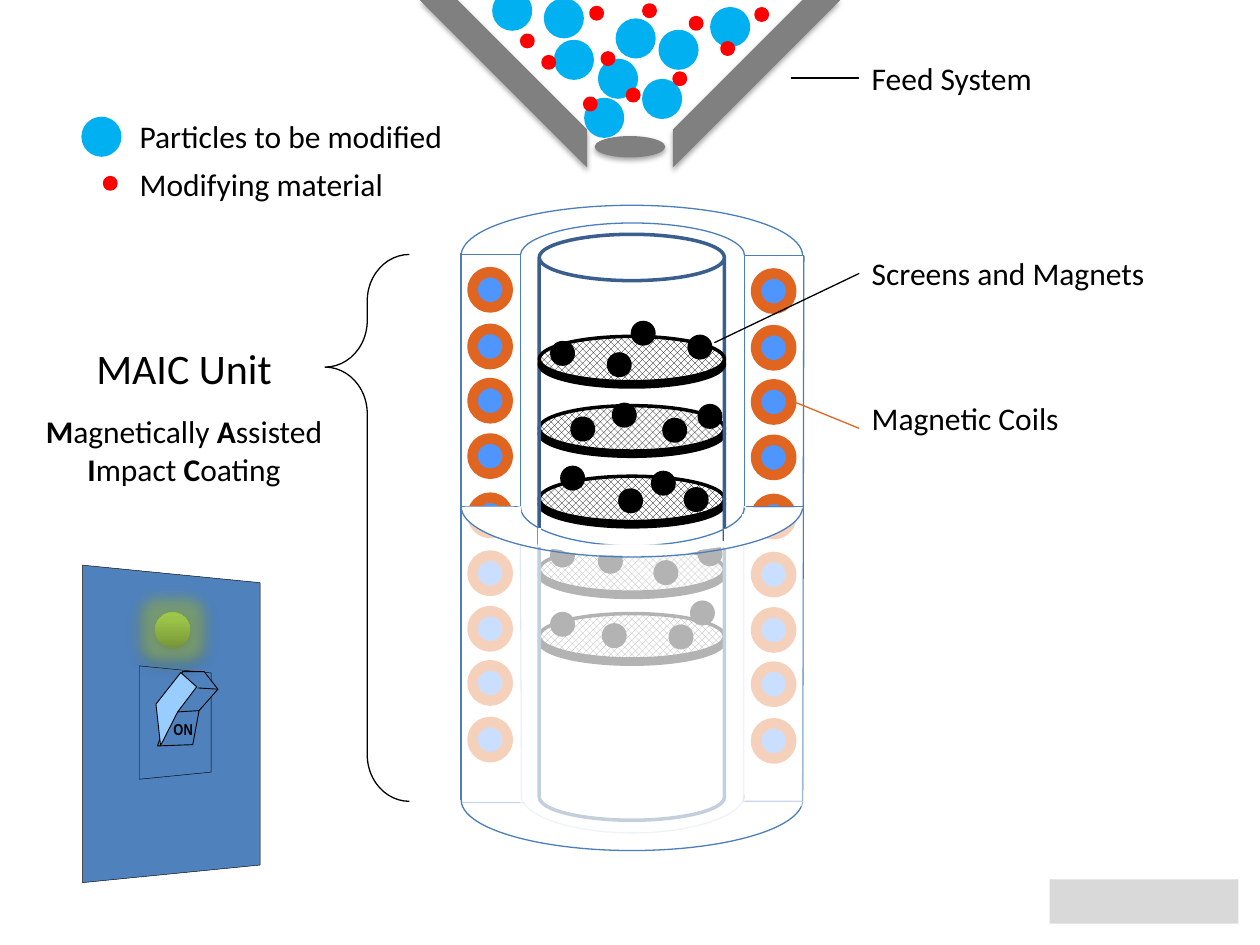
from dataclasses import dataclass

from lxml import etree
from pptx import Presentation
from pptx import util as u
from pptx.dml.color import RGBColor
from pptx.enum import dml, shapes, text
from pptx.oxml import ns

KIND = shapes.MSO_SHAPE
COLUMNS, ROWS = 10, 7.5
CELL = u.Inches(1)


@dataclass(frozen=True)
class Theme:
    font: str = "Calibri"
    switch_font: str = "Arial Narrow"
    title: int = 24
    body: int = 18
    small: int = 9
    black: str = "000000"
    white: str = "FFFFFF"
    steel: str = "4B7EBC"
    tube: str = "3A5F8C"
    panel: str = "4F81BD"
    lever: str = "99CCFF"
    copper: str = "E06520"
    core: str = "0066FF"
    particle: str = "00B0F0"
    modifier: str = "FF0000"
    hopper: str = "808080"
    badge: str = "D9D9D9"
    glow: str = "9BBB59"
    lamp: tuple = ((0, "779737"), (80, "9BC348"), (100, "9DC746"))
    hair: float = 0.75
    thin: float = 0.5
    bold: float = 2
    coil: float = 6


THEME = Theme()
SOFT_SHADOW = (35, 3.1, 1.8)
HARD_SHADOW = (100, 0, 3)
ARC_START = 108.373
COIL_ROWS = (2.16, 2.61, 3.04, 3.48, 3.95, 4.41, 4.85, 5.28, 5.73)
BACK_SCREENS = (
    (4.87, ((4.79, 4.96), (5.32, 4.97), (5.49, 4.78), (4.38, 4.87))),
    (4.34, ((4.38, 4.32), (5.2, 4.46), (5.55, 4.31), (4.76, 4.37))),
    (3.78, ((4.46, 3.71), (5.18, 3.75), (5.44, 3.88), (4.92, 3.89))),
    (3.22, ((5.55, 3.22), (4.87, 3.21), (4.54, 3.32), (5.27, 3.33))),
)
TOP_MAGNETS = ((5.47, 2.67), (4.83, 2.81), (5.02, 2.56), (4.38, 2.72))
PARTICLES = ((4.41, 0.33), (4.76, 0.48), (5.24, 0.25), (5.11, 0.64), (5.65, 0.07),
             (3.92, -0.06), (4.9, 0.16), (4.65, 0.79), (4.33, 0))
MODIFIERS = ((4.14, 0.28), (4.78, 0.42), (5.35, 0.58), (4.69, 0.06), (5.11, 0.04), (4.98, 0.71),
             (5.73, 0.34), (4.31, 0.45), (5.48, 0.14), (4.64, 0.78), (6, 0.07))


def cells(*lengths):
    return [round(length * CELL) for length in lengths]


def apply(target, formats):
    for name, value in formats.items():
        setattr(target, name, value)


def node(parent, tag, **attributes):
    values = {key: str(value) for key, value in attributes.items()}
    return etree.SubElement(parent, ns.qn(f"a:{tag}"), values)


def fade(element, alpha):
    for color in element.iter(ns.qn("a:srgbClr")):
        node(color, "alpha", val=alpha * 1000)


def style(shape, fill=None, line=None, weight=THEME.hair, alpha=None, shadow=None, glow=None):
    if fill:
        shape.fill.solid()
        shape.fill.fore_color.rgb = RGBColor.from_string(fill)
    else:
        shape.fill.background()
    if alpha:
        fade(shape.element.spPr, alpha)
    if line:
        shape.line.color.rgb = RGBColor.from_string(line)
        shape.line.width = u.Pt(weight)
    else:
        shape.line.fill.background()
    shape.shadow.inherit = False
    effects = shape.element.spPr.find(ns.qn("a:effectLst"))
    if glow:
        halo = node(effects, "glow", rad=u.Pt(16))
        node(node(halo, "srgbClr", val=glow), "alpha", val=60000)
    if shadow:
        opacity, blur, distance = shadow
        cast = node(effects, "outerShdw", blurRad=u.Pt(blur), dist=u.Pt(distance),
                    dir=5400000, rotWithShape=0)
        node(node(cast, "srgbClr", val=THEME.black), "alpha", val=opacity * 1000)


def figure(page, kind, place, adjust=(), turn=0, flip=False, **look):
    shape = page.shapes.add_shape(kind, *cells(*place))
    for index, value in enumerate(adjust):
        shape.adjustments[index] = value
    shape.rotation = turn
    if flip:
        shape.element.spPr.get_or_add_xfrm().set("flipH", "1")
    style(shape, **look)
    return shape


def disc(page, left, top, size, fill, line, weight=THEME.bold, **look):
    figure(page, KIND.OVAL, (left, top, size, size), fill=fill, line=line, weight=weight, **look)


def arc(page, place, end=0, turn=0):
    return figure(page, KIND.ARC, place, (ARC_START, end), turn, line=THEME.steel)


def polygon(page, points, turn=0, **look):
    corners = [cells(*point) for point in points]
    builder = page.shapes.build_freeform(*corners[0], scale=1.0)
    builder.add_line_segments(corners[1:], close=True)
    shape = builder.convert_to_shape()
    shape.rotation = turn
    style(shape, **look)


def stroke(page, start, end, color=THEME.steel, weight=THEME.hair, alpha=None):
    connector = page.shapes.add_connector(shapes.MSO_CONNECTOR.STRAIGHT, *cells(*start, *end))
    connector.line.color.rgb = RGBColor.from_string(color)
    connector.line.width = u.Pt(weight)
    if alpha:
        fade(connector.element.spPr, alpha)
    node(connector.element.spPr, "effectLst")


def gradient(shape, stops, angle):
    properties = shape.element.spPr
    properties.remove(properties.find(ns.qn("a:noFill")))
    fill = etree.Element(ns.qn("a:gradFill"), {"rotWithShape": "1"})
    listing = node(fill, "gsLst")
    for position, color in stops:
        node(node(listing, "gs", pos=position * 1000), "srgbClr", val=color)
    node(fill, "lin", ang=angle * 60000, scaled=0)
    properties.find(ns.qn("a:prstGeom")).addnext(fill)


def label(page, place, paragraphs, size=THEME.body, name=THEME.font, align=None):
    box = page.shapes.add_textbox(*cells(*place))
    frame = box.text_frame
    apply(frame, {"word_wrap": False, "auto_size": text.MSO_AUTO_SIZE.SHAPE_TO_FIT_TEXT})
    for index, (spans, formats) in enumerate(paragraphs):
        para = frame.add_paragraph() if index else frame.paragraphs[0]
        apply(para, {"alignment": align, **formats})
        for words, marks in spans:
            span = para.add_run()
            span.text = words
            apply(span.font, {"name": name, "size": u.Pt(size), **marks})
            span.font.color.rgb = RGBColor.from_string(THEME.black)


def magnets(page, places):
    for left, top in places:
        disc(page, left, top, 0.17, THEME.black, THEME.black)


def screen(page, top):
    mesh = figure(page, KIND.OVAL, (4.28, top, 1.47, 0.36), line=THEME.black,
                  weight=THEME.bold, shadow=HARD_SHADOW)
    mesh.fill.patterned()
    mesh.fill.pattern = dml.MSO_PATTERN.OUTLINED_DIAMOND
    mesh.fill.fore_color.rgb = RGBColor.from_string(THEME.black)
    mesh.fill.back_color.rgb = RGBColor.from_string(THEME.white)


def coil_column(page, left, shift, veil):
    def coils(tops):
        for top in tops:
            disc(page, left, top + shift, 0.28, THEME.core, THEME.copper, THEME.coil, alpha=69)

    coils(COIL_ROWS[4:])
    figure(page, KIND.RECTANGLE, veil, fill=THEME.white, alpha=70)
    stroke(page, (veil[0], 4.02), (veil[0] + veil[2], 4.02))
    coils(COIL_ROWS[:4])


def housing(page):
    for top, places in BACK_SCREENS:
        screen(page, top)
        magnets(page, places)
    figure(page, KIND.CAN, (4.28, 1.86, 1.47, 4.65), line=THEME.tube, weight=THEME.bold)
    screen(page, 2.67)
    arc(page, (3.66, 1.63, 2.71, 0.8))
    arc(page, (3.66, 5.95, 2.71, 0.8), turn=180)
    arc(page, (4.13, 1.77, 1.78, 0.52))
    for start, end in (((3.66, 2.01), (3.66, 6.35)), ((6.38, 2.03), (6.37, 6.36)),
                       ((4.13, 2.02), (4.13, 4.02)), ((5.91, 2.03), (5.91, 4.02)),
                       ((5.91, 2.03), (6.38, 2.03)), ((3.66, 2.02), (4.13, 2.02))):
        stroke(page, start, end)
    coil_column(page, 6, 0.01, (5.92, 4.02, 0.45, 2.38))
    coil_column(page, 3.75, 0, (3.67, 4.02, 0.46, 2.33))
    for start, end in (((5.9, 6.36), (6.37, 6.36)), ((3.67, 6.37), (4.17, 6.37)),
                       ((4.13, 4.02), (4.14, 6.34)), ((5.9, 4.02), (5.9, 6.37))):
        stroke(page, start, end, alpha=30)
    fade(arc(page, (4.13, 5.99, 1.78, 0.62), 214.401, 180).element.spPr, 30)


def cutaway(page):
    white = THEME.white
    arc(page, (4.13, 3.71, 1.78, 0.62), turn=180)
    magnets(page, TOP_MAGNETS)
    figure(page, KIND.RECTANGLE, (4.13, 4.32, 1.78, 2.31), fill=white, alpha=70)
    stroke(page, (3.66, 4.02), (4.13, 4.02))
    for start, end in (((4.28, 4.19), (4.28, 4.34)), ((5.76, 4.2), (5.76, 4.35)),
                       ((5.9, 4.08), (5.9, 4.32)), ((4.12, 4.02), (4.13, 4.32))):
        stroke(page, start, end, white, THEME.bold)
    for kind, place, turn in ((KIND.OVAL, (4.46, 4.32, 1.09, 0.09), 0),
                              (KIND.OVAL, (5.81, 4.09, 0.53, 0.17), 340.4),
                              (KIND.OVAL, (3.68, 4.09, 0.53, 0.17), 19.6),
                              (KIND.RECTANGLE, (3.69, 4.02, 0.39, 0.11), 0),
                              (KIND.RECTANGLE, (5.95, 4.03, 0.39, 0.11), 0)):
        figure(page, kind, place, turn=turn, fill=white)
    arc(page, (3.66, 3.62, 2.71, 0.8), turn=180)
    for points in (((4.3, 4.33), (4.59, 4.37), (4.45, 4.29)),
                   ((5.78, 4.32), (5.49, 4.36), (5.63, 4.28))):
        polygon(page, points, fill=white, line=white, weight=THEME.bold)


def feed(page):
    gray = {"fill": THEME.hopper, "shadow": SOFT_SHADOW}
    for left, flip in ((5.34, False), (3.33, True)):
        figure(page, KIND.DIAGONAL_STRIPE, (left, 0, 1.33, 1.33), (0.773,), flip=flip, **gray)
    figure(page, KIND.OVAL, (4.72, 1.08, 0.56, 0.17), **gray)
    for places, size, color in ((PARTICLES + ((0.66, 0.94),), 0.29, THEME.particle),
                                (MODIFIERS + ((0.83, 1.41),), 0.09, THEME.modifier)):
        for left, top in places:
            disc(page, left, top, size, color, color)


def switch(page):
    for place in ((0.1, 5.04, 2.52, 1.41), (0.94, 5.45, 0.9, 0.57)):
        figure(page, KIND.TRAPEZOID, place, (0.099,), 90, fill=THEME.panel,
               line=THEME.black, weight=0.25)
    edge = {"line": THEME.black, "weight": THEME.thin}
    polygon(page, ((1.45, 5.33), (1.62, 5.33), (1.73, 5.47), (1.58, 5.64), (1.53, 5.91), (1.25, 5.92)),
            fill=THEME.panel, **edge)
    polygon(page, ((1.26, 5.91), (1.24, 5.58), (1.45, 5.34), (1.57, 5.46), (1.41, 5.65)),
            turn=357, fill=THEME.lever, **edge)
    stroke(page, (1.57, 5.46), (1.73, 5.47), THEME.black, THEME.thin)
    stroke(page, (1.41, 5.65), (1.58, 5.64), THEME.black, THEME.thin)
    label(page, (1.25, 5.66, 0.39, 0.25), [([(" ON", {"bold": True})], {})],
          size=THEME.small, name=THEME.switch_font)
    lamp = figure(page, KIND.OVAL, (1.23, 4.86, 0.28, 0.28), shadow=SOFT_SHADOW, glow=THEME.glow)
    gradient(lamp, THEME.lamp, 270)


def captions(page):
    for place, words in (((6.82, 1.97, 2.39, 0.4), "Screens and Magnets"),
                         ((6.82, 3.12, 2.43, 0.55), "Magnetic Coils"),
                         ((6.82, 0.42, 1.49, 0.4), "Feed System"),
                         ((1.01, 0.88, 2.63, 0.4), "Particles to be modified"),
                         ((1.01, 1.26, 2.15, 0.4), "Modifying material")):
        label(page, place, [([(words, {})], {})])
    stroke(page, (6.82, 2.17), (5.67, 2.72), THEME.black)
    stroke(page, (6.82, 3.4), (6.28, 3.18), THEME.copper)
    stroke(page, (6.28, 0.62), (6.82, 0.62), THEME.black)
    figure(page, KIND.LEFT_BRACE, (2.58, 2.02, 0.67, 4.34), (0.552, 0.206), line=THEME.black)
    strong = {"bold": True}
    label(page, (0.25, 2.67, 2.42, 1.26), [
        ([("MAIC Unit", {"size": u.Pt(THEME.title)})], {}),
        ([("M", strong), ("agnetically ", {}), ("A", strong), ("ssisted", {})], {"space_before": u.Pt(11)}),
        ([("I", strong), ("mpact ", {}), ("C", strong), ("oating", {})], {}),
    ], align=text.PP_ALIGN.CENTER)


def badge(page):
    figure(page, KIND.RECTANGLE, (8.33, 6.98, 1.5, 0.35), fill=THEME.badge)


def main():
    deck = Presentation()
    apply(deck, {"slide_width": COLUMNS * CELL, "slide_height": round(ROWS * CELL)})
    page = deck.slides.add_slide(deck.slide_layouts[6])
    for draw in (housing, cutaway, feed, switch, captions, badge):
        draw(page)
    deck.save("out.pptx")


if __name__ == "__main__":
    main()
